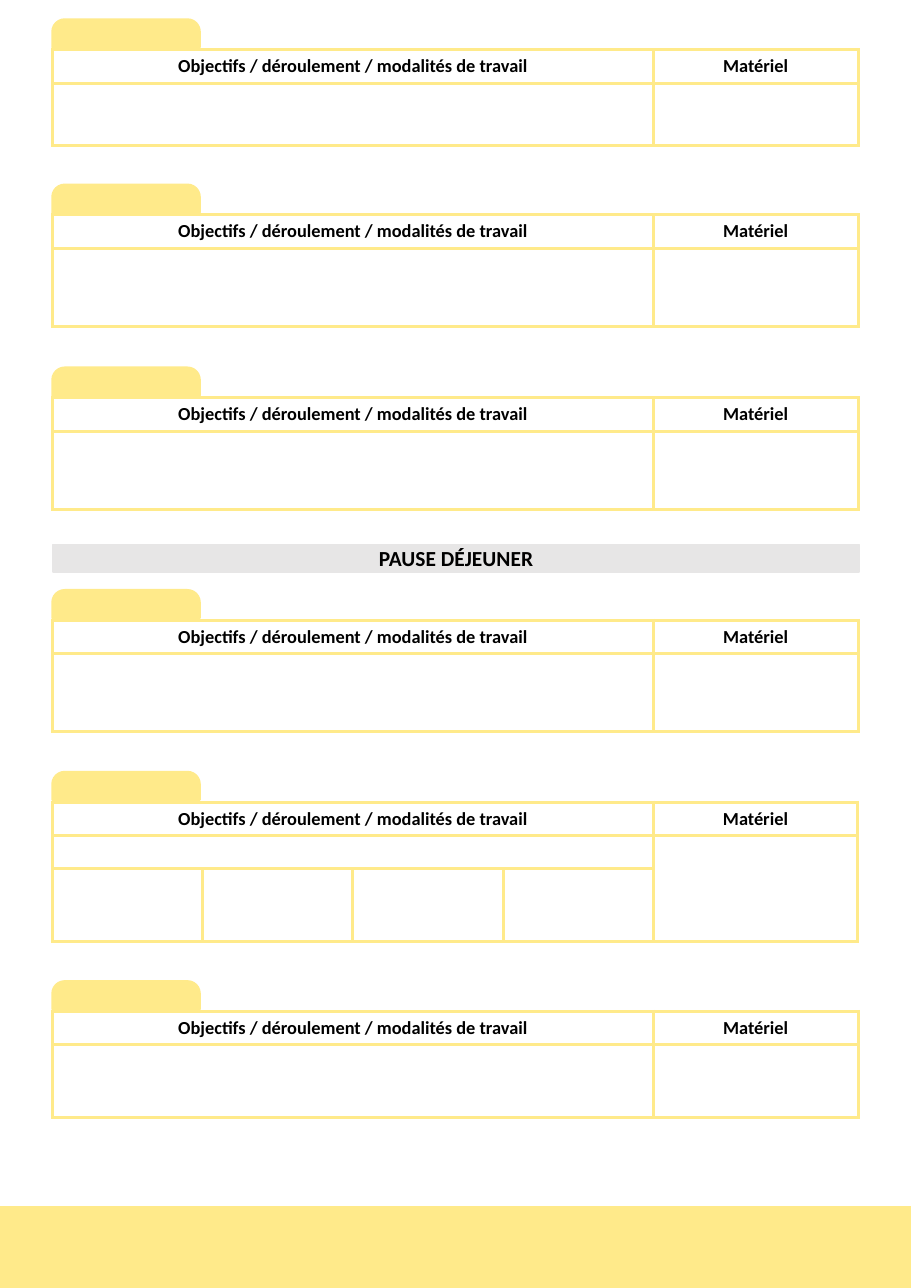
from lxml import etree
from pptx import Presentation
from pptx.dml.color import RGBColor
from pptx.enum.shapes import MSO_SHAPE
from pptx.enum.text import MSO_ANCHOR, PP_ALIGN
from pptx.oxml.ns import qn
from pptx.util import Inches, Pt

RECTANGLE = MSO_SHAPE.RECTANGLE
TAB = MSO_SHAPE.ROUND_2_SAME_RECTANGLE
MIDDLE = MSO_ANCHOR.MIDDLE
CENTER = PP_ALIGN.CENTER
YELLOW, GREY, WHITE, BLACK = "FFEA8A", "E7E6E6", "FFFFFF", "000000"
PAGE_WIDTH, PAGE_HEIGHT = 8.27, 11.69
LEFT, WIDTH = 0.48, 7.32
GOALS_WIDTH, MATERIAL_WIDTH = 5.45, 1.86
HEADER_HEIGHT = 0.3
GOALS = "Objectifs / déroulement / modalités de travail"
MATERIAL = "Matériel"


def write(frame, text, size=12, color=BLACK, bold=True):
    paragraph = frame.paragraphs[0]
    paragraph.alignment = CENTER
    if not text:
        etree.SubElement(paragraph._p, qn("a:endParaRPr"), sz=str(size * 100))
        return
    run = paragraph.add_run()
    run.text = text
    run.font.name = "Calibri"
    run.font.size = Pt(size)
    run.font.bold = bold
    run.font.color.rgb = RGBColor.from_string(color)


def add_block(kind, left, top, width, height, color, line_width):
    block = slide.shapes.add_shape(
        kind, Inches(left), Inches(top), Inches(width), Inches(height))
    block.shadow.inherit = False
    block.fill.solid()
    block.fill.fore_color.rgb = RGBColor.from_string(color)
    block.line.color.rgb = RGBColor.from_string(color)
    block.line.width = Pt(line_width)
    return block


prs = Presentation()
prs.slide_width = Inches(PAGE_WIDTH)
prs.slide_height = Inches(PAGE_HEIGHT)
slide = prs.slides.add_slide(prs.slide_layouts[6])

add_block(RECTANGLE, 0, 10.95, PAGE_WIDTH, 0.74, YELLOW, 1)

lunch_break = add_block(RECTANGLE, LEFT, 4.94, WIDTH, 0.25, GREY, 1)
lunch_break.text_frame.vertical_anchor = MIDDLE
write(lunch_break.text_frame, "PAUSE DÉJEUNER", size=14)

sessions = [
    (0.45, [0.57], 1),
    (1.95, [0.71], 1),
    (3.61, [0.71], 1),
    (5.63, [0.71], 1),
    (7.28, [0.3, 0.66], 4),
    (9.18, [0.66], 1),
]

for top, body_heights, groups in sessions:
    heights = [HEADER_HEIGHT] + body_heights
    widths = [GOALS_WIDTH / groups] * groups + [MATERIAL_WIDTH]
    table = slide.shapes.add_table(
        len(heights), len(widths), Inches(LEFT), Inches(top),
        Inches(WIDTH), Inches(sum(heights))).table
    table.first_row = False
    table.horz_banding = False
    for row, height in zip(table.rows, heights):
        row.height = Inches(height)
    for column, width in zip(table.columns, widths):
        column.width = Inches(width)

    headings = {(0, 0): GOALS, (0, groups): MATERIAL}
    for r in range(len(heights)):
        for c in range(len(widths)):
            cell = table.cell(r, c)
            cell.vertical_anchor = MIDDLE
            write(cell.text_frame, headings.get((r, c), ""))
            properties = cell._tc.get_or_add_tcPr()
            for side in ("a:lnL", "a:lnR", "a:lnT", "a:lnB"):
                border = etree.SubElement(properties, qn(side), w=str(Pt(2.25)))
                paint = etree.SubElement(border, qn("a:solidFill"))
                etree.SubElement(paint, qn("a:srgbClr"), val=YELLOW)
            cell.fill.solid()
            cell.fill.fore_color.rgb = RGBColor.from_string(WHITE)

    if groups > 1:
        for r in (0, 1):
            table.cell(r, 0).merge(table.cell(r, groups - 1))
        table.cell(1, groups).merge(table.cell(2, groups))

    session_tab = add_block(TAB, LEFT, top - 0.27, 1.33, 0.25, YELLOW, 2)
    session_tab.adjustments[0] = 0.43
    session_tab.adjustments[1] = 0

prs.save("out.pptx")
